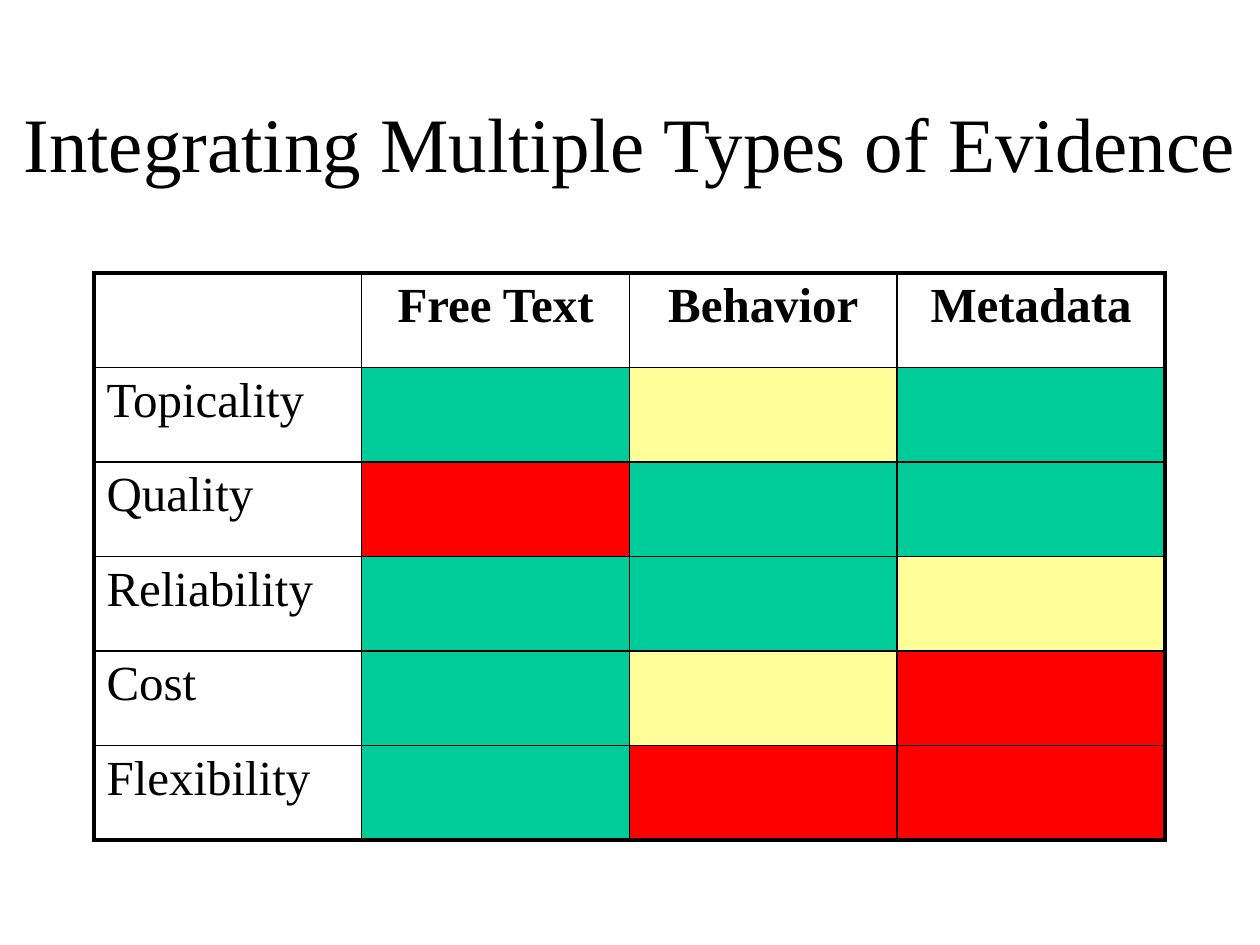
from lxml.etree import SubElement
from pptx import Presentation
from pptx.dml.color import RGBColor
from pptx.enum.text import MSO_ANCHOR, PP_ALIGN
from pptx.oxml.ns import qn
from pptx.util import Emu, Pt

TITLE = "Integrating Multiple Types of Evidence"
HEADERS = ["", "Free Text", "Behavior", "Metadata"]
RATINGS = [
    ("Topicality", ["good", "fair", "good"]),
    ("Quality", ["poor", "good", "good"]),
    ("Reliability", ["good", "good", "fair"]),
    ("Cost", ["good", "fair", "poor"]),
    ("Flexibility", ["good", "poor", "poor"]),
]
COLORS = {"ink": "000000", "good": "00CC99", "fair": "FFFF99", "poor": "FF0000"}
FONT = "Times New Roman"
SLIDE_SIZE = (1260, 945)
TITLE_BOX = (0, 63, 1260, 158)
TABLE_BOX = (94, 273, 1071, 567)
OUTER_LINE, INNER_LINE = Pt(2.25), Pt(1)


def px(length):
    return Emu(round(length * 914400 / 126))


def style_paragraph(paragraph, size, bold=False, alignment=PP_ALIGN.LEFT):
    paragraph.alignment = alignment
    paragraph.font.name = FONT
    paragraph.font.size = Pt(size)
    paragraph.font.bold = bold
    paragraph.font.color.rgb = RGBColor.from_string(COLORS["ink"])


def add_borders(cell, outer_sides):
    properties = cell._tc.get_or_add_tcPr()
    for side, is_outer in outer_sides.items():
        width = OUTER_LINE if is_outer else INNER_LINE
        line = SubElement(properties, qn(f"a:ln{side}"), w=str(width))
        fill = SubElement(line, qn("a:solidFill"))
        SubElement(fill, qn("a:srgbClr"), val=COLORS["ink"])


def add_title(slide):
    title = slide.shapes.title
    title.left, title.top, title.width, title.height = map(px, TITLE_BOX)
    title.text_frame.text = TITLE
    title.text_frame.vertical_anchor = MSO_ANCHOR.MIDDLE
    style_paragraph(title.text_frame.paragraphs[0], 44, alignment=PP_ALIGN.CENTER)


def add_rating_table(slide):
    row_count, column_count = len(RATINGS) + 1, len(HEADERS)
    table = slide.shapes.add_table(row_count, column_count, *map(px, TABLE_BOX)).table
    table.first_row = table.horz_banding = False
    texts = [HEADERS] + [[label] + [""] * len(ratings) for label, ratings in RATINGS]
    fills = [[None] * column_count] + [[None] + ratings for _, ratings in RATINGS]
    for row in range(row_count):
        for column in range(column_count):
            cell = table.cell(row, column)
            add_borders(cell, {
                "L": column == 0,
                "R": column == column_count - 1,
                "T": row == 0,
                "B": row == row_count - 1,
            })
            rating = fills[row][column]
            if rating:
                cell.fill.solid()
                cell.fill.fore_color.rgb = RGBColor.from_string(COLORS[rating])
            else:
                cell.fill.background()
            cell.text = texts[row][column]
            is_header = row == 0
            alignment = PP_ALIGN.CENTER if is_header else PP_ALIGN.LEFT
            style_paragraph(cell.text_frame.paragraphs[0], 28, is_header, alignment)


def main():
    presentation = Presentation()
    presentation.slide_width, presentation.slide_height = map(px, SLIDE_SIZE)
    slide = presentation.slides.add_slide(presentation.slide_layouts[5])
    add_title(slide)
    add_rating_table(slide)
    presentation.save("out.pptx")


if __name__ == "__main__":
    main()
